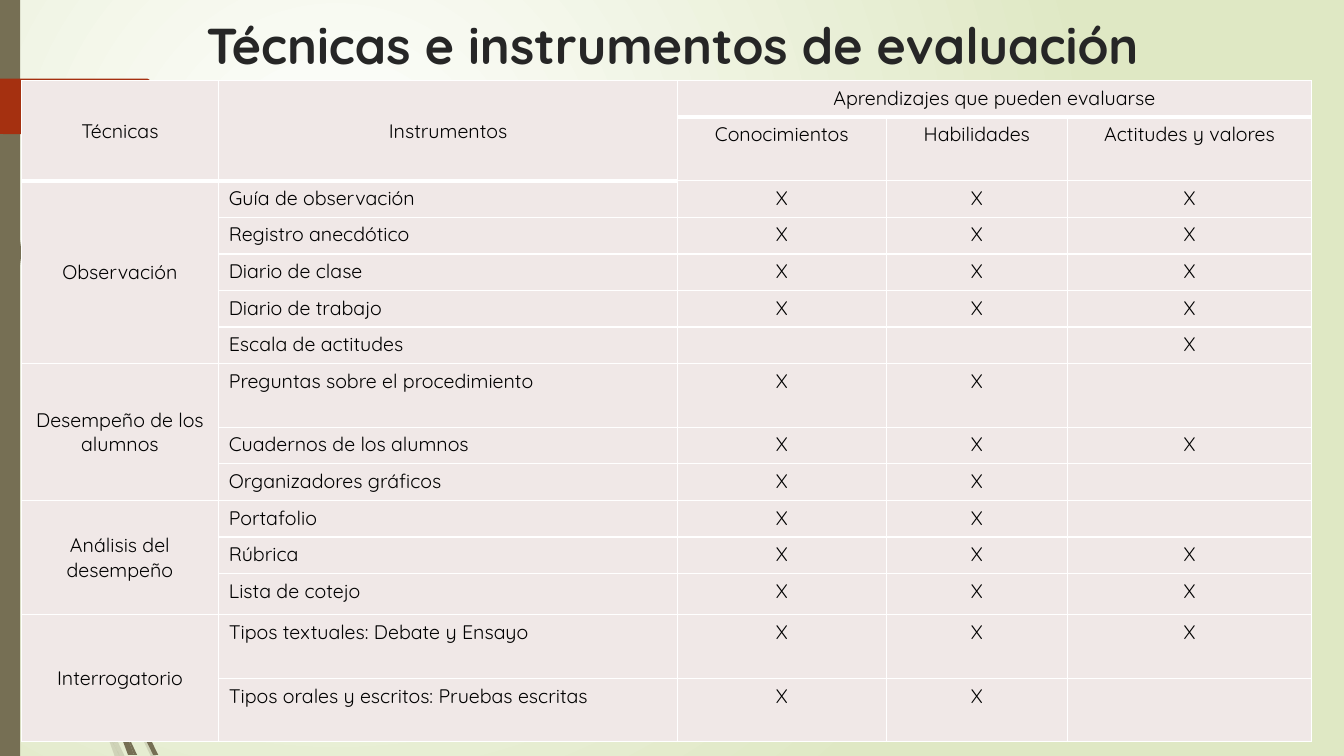
"""Builds a slide with a table of assessment techniques and instruments."""
from lxml import etree
from pptx import Presentation, util as u
from pptx.dml.color import RGBColor
from pptx.enum import shapes, text
from pptx.oxml.ns import qn

HEADING = "Técnicas e instrumentos de evaluación"
LEARNINGS = "Aprendizajes que pueden evaluarse"
HEADERS = ["Técnicas", "Instrumentos", "Conocimientos", "Habilidades", "Actitudes y valores"]
TECHNIQUES = [
    ("Observación", [
        ("Guía de observación", "XXX"),
        ("Registro anecdótico", "XXX"),
        ("Diario de clase", "XXX"),
        ("Diario de trabajo", "XXX"),
        ("Escala de actitudes", "  X")]),
    ("Desempeño de los alumnos", [
        ("Preguntas sobre el procedimiento", "XX "),
        ("Cuadernos de los alumnos", "XXX"),
        ("Organizadores gráficos", "XX ")]),
    ("Análisis del desempeño", [
        ("Portafolio", "XX "),
        ("Rúbrica", "XXX"),
        ("Lista de cotejo", "XXX")]),
    ("Interrogatorio", [
        ("Tipos textuales: Debate y Ensayo", "XXX"),
        ("Tipos orales y escritos: Pruebas escritas", "XX ")]),
]

WHITE = RGBColor(0xFF, 0xFF, 0xFF)
BLACK = RGBColor(0, 0, 0)
PALE_GREEN = RGBColor(0xDF, 0xE8, 0xC4)
OLIVE = RGBColor(0x76, 0x6F, 0x54)
RUST = RGBColor(0xA5, 0x30, 0x10)
CHARCOAL = RGBColor(0x26, 0x26, 0x26)
ROSE = RGBColor(0xF0, 0xE8, 0xE7)

WIDTH, HEIGHT = 13.33, 7.5
UNITS = 100
TABLE_AT = (0.21, 0.8)
COLUMNS = [1.96, 4.55, 2.07, 1.8, 2.42]
TABLE_HEIGHT = 6.56
SPECIAL_ROWS = {1: 0.63, 7: 0.63, 12: 0.41, 13: 0.63, 14: 0.63}

ARROW = [(173, 108), (148, 133), (146, 134), (0, 133), (0, 78), (146, 78), (148, 79), (173, 104)]
PALE_STRANDS = [
    [(92, 607), (88, 596), (88, 610), (123, 694), (150, 751), (155, 751), (127, 692)],
    [(119, 751), (124, 751), (105, 711)],
    [(101, 714), (114, 751), (119, 751)],
    [(96, 692), (93, 683), (99, 707), (101, 714), (119, 751), (105, 711)],
]
DARK_STRANDS = [
    [(7, 110), (17, 233), (33, 355), (56, 477), (57, 481), (55, 453), (36, 355),
     (19, 232), (8, 109), (5, 48), (4, 0), (3, 0), (4, 48)],
    [(113, 649), (110, 641), (111, 656), (132, 708), (152, 749), (157, 749), (136, 706)],
    [(133, 749), (136, 749), (122, 719)],
    [(117, 722), (127, 749), (131, 749)],
    [(116, 706), (110, 691), (116, 717), (117, 722), (130, 749), (133, 749), (122, 719)],
]


def apply(target, values):
    for name, value in values.items():
        setattr(target, name, value)


def paint(part, color):
    part.shadow.inherit = False
    part.fill.solid()
    part.fill.fore_color.rgb = color
    part.line.fill.background()


def outline(slide, points, color, alpha=None):
    builder = slide.shapes.build_freeform(*points[0], scale=u.Inches(1) / UNITS)
    builder.add_line_segments(points[1:], close=True)
    part = builder.convert_to_shape()
    paint(part, color)
    if alpha:
        tint = part.fill._xPr.find(".//" + qn("a:srgbClr"))
        etree.SubElement(tint, qn("a:alpha"), val=str(alpha * 1000))


def write(paragraph, words, size, color, bold, align):
    paragraph.alignment = align
    if words:
        run = paragraph.add_run()
        run.text = words
        run.font.color.rgb = color
        apply(run.font, {"size": u.Pt(size), "name": "Quicksand", "bold": bold})
    else:
        etree.SubElement(paragraph._p, qn("a:endParaRPr"), sz=str(size * 100))


def draw_background(slide):
    fill = slide.background.fill
    fill.gradient()
    for stop, position, color in zip(fill.gradient_stops, (0, 1), (WHITE, PALE_GREEN)):
        stop.position = position
        stop.color.rgb = color
    gradient = slide._element.find(".//" + qn("a:gradFill"))
    gradient.remove(gradient.find(qn("a:lin")))
    circle = etree.SubElement(gradient, qn("a:path"), {"path": "circle"})
    etree.SubElement(circle, qn("a:fillToRect"), l="50000", t="50000", r="100000", b="100000")


def draw_ornaments(slide):
    for strand in PALE_STRANDS:
        outline(slide, strand, OLIVE, alpha=20)
    for strand in DARK_STRANDS:
        outline(slide, strand, OLIVE)
    band = slide.shapes.add_shape(shapes.MSO_SHAPE.RECTANGLE, 0, 0, u.Inches(0.2), u.Inches(HEIGHT))
    paint(band, OLIVE)
    outline(slide, ARROW, RUST)


def place_heading(slide):
    heading = slide.shapes.title
    slide.shapes._spTree.append(heading._element)
    apply(heading, {"left": u.Inches(0.92), "top": u.Inches(0.09),
                    "width": u.Inches(11.5), "height": u.Inches(0.89)})
    apply(heading.text_frame, {"vertical_anchor": text.MSO_ANCHOR.TOP, "word_wrap": True})
    write(heading.text_frame.paragraphs[0], HEADING, 36, CHARCOAL, True, text.PP_ALIGN.CENTER)


def border(cell, bottom_width):
    properties = cell._tc.get_or_add_tcPr()
    for order, side in enumerate("LRTB"):
        width = bottom_width if side == "B" else 1
        line = etree.Element(qn("a:ln" + side), w=str(u.Pt(width)))
        solid = etree.SubElement(line, qn("a:solidFill"))
        etree.SubElement(solid, qn("a:srgbClr"), val=str(WHITE))
        properties.insert(order, line)


def table_content():
    rows = [HEADERS[:2] + [LEARNINGS, "", ""], ["", ""] + HEADERS[2:]]
    merges = [(0, 0, 1, 0), (0, 1, 1, 1), (0, 2, 0, 4)]
    for technique, instruments in TECHNIQUES:
        first = len(rows)
        for instrument, marks in instruments:
            label = technique if len(rows) == first else ""
            rows.append([label, instrument] + [mark.strip() for mark in marks])
        merges.append((first, 0, len(rows) - 1, 0))
    return rows, merges


def draw_table(slide):
    rows, merges = table_content()
    frame = slide.shapes.add_table(len(rows), len(COLUMNS), *map(u.Inches, TABLE_AT),
                                   u.Inches(sum(COLUMNS)), u.Inches(TABLE_HEIGHT))
    table = frame.table
    apply(table, {"first_row": False, "horz_banding": False})
    for column, width in zip(table.columns, COLUMNS):
        column.width = u.Inches(width)
    plain = (TABLE_HEIGHT - sum(SPECIAL_ROWS.values())) / (len(rows) - len(SPECIAL_ROWS))
    for r, values in enumerate(rows):
        table.rows[r].height = u.Inches(SPECIAL_ROWS.get(r, plain))
        for c, words in enumerate(values):
            cell = table.cell(r, c)
            cell.fill.solid()
            cell.fill.fore_color.rgb = ROSE
            border(cell, 3 if r == 0 else 1)
            left = c == 1 and r > 1
            write(cell.text_frame.paragraphs[0], words, 14, BLACK, False,
                  text.PP_ALIGN.LEFT if left else text.PP_ALIGN.CENTER)
            if c == 0 or (c == 1 and r == 0):
                cell.vertical_anchor = text.MSO_ANCHOR.MIDDLE
    for top, start, bottom, end in merges:
        table.cell(top, start).merge(table.cell(bottom, end))


def main():
    deck = Presentation()
    apply(deck, {"slide_width": u.Inches(WIDTH), "slide_height": u.Inches(HEIGHT)})
    slide = deck.slides.add_slide(deck.slide_layouts[5])
    draw_background(slide)
    draw_ornaments(slide)
    place_heading(slide)
    draw_table(slide)
    deck.save("out.pptx")


if __name__ == "__main__":
    main()
